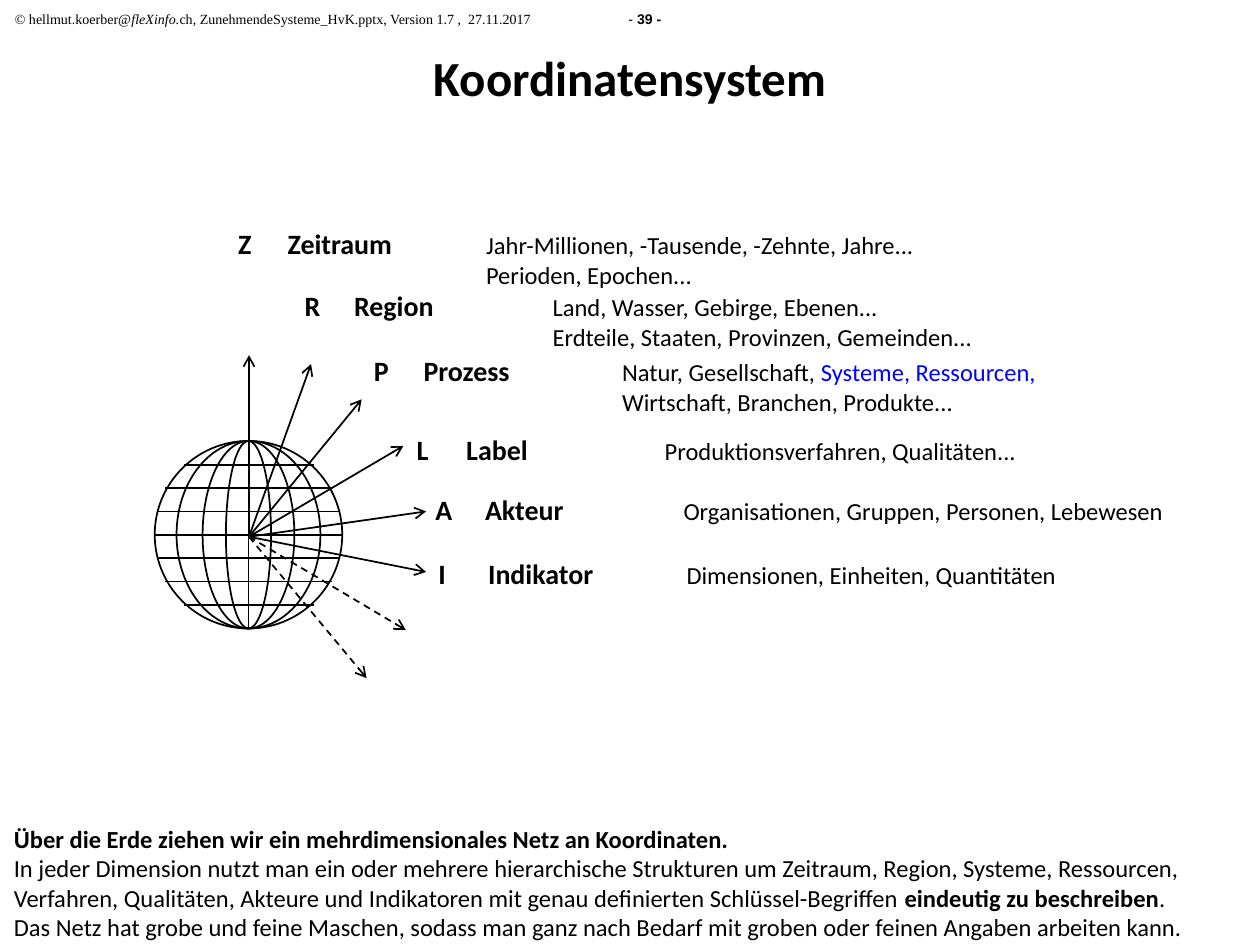
from copy import deepcopy

from lxml import etree
from pptx import Presentation
from pptx.dml.color import RGBColor
from pptx.enum.dml import MSO_LINE
from pptx.enum.shapes import MSO_CONNECTOR, MSO_SHAPE
from pptx.enum.text import MSO_ANCHOR, MSO_AUTO_SIZE, PP_ALIGN
from pptx.oxml.ns import qn
from pptx.util import Cm, Pt

STRAIGHT, OVAL, DASH = MSO_CONNECTOR.STRAIGHT, MSO_SHAPE.OVAL, MSO_LINE.DASH
CENTER, MIDDLE = PP_ALIGN.CENTER, MSO_ANCHOR.MIDDLE
GROW = MSO_AUTO_SIZE.SHAPE_TO_FIT_TEXT

COLORS = {"ink": "000000", "accent": "0000FF"}
TITLE = {"size": Pt(28), "bold": True}
TERM = {"size": Pt(16), "bold": True}
BODY = {"size": Pt(14), "bold": False}
STRONG = {"size": Pt(14), "bold": True}
ACCENT = {**BODY, "color": "accent"}
NOTE = {"size": Pt(8), "name": "Times New Roman"}
NOTE_ITALIC = {**NOTE, "italic": True}
PAGE = {"size": Pt(8), "name": "Arial"}
PAGE_BOLD = {**PAGE, "bold": True}

CX, CY, DIAMETER = 5.01, 10.78, 3.78
MERIDIAN_WIDTHS = [3.78, 2.9, 1.85, 0.91]
PARALLEL_HALVES = [1.9, 1.84, 1.68, 1.31]
PARALLEL_GAP = 0.47
ORIGIN = (5.02, 10.82)
AXES = [(5.02, 7.16), (6.27, 7.34), (7.29, 8.05), (8.13, 8.99), (8.59, 10.31), (8.59, 11.53)]
OPEN_AXES = [(7.39, 13.67), (8.18, 12.7)]
DIMENSIONS = [
    (4.55, 4.45, 17.83, 1.55, "Z\tZeitraum\t",
     [("Jahr-Millionen, -Tausende, -Zehnte, Jahre...\n\t\tPerioden, Epochen...", BODY)]),
    (5.89, 5.69, 17.7, 1.55, "R\tRegion\t",
     [("Land, Wasser, Gebirge, Ebenen...\n\t\tErdteile, Staaten, Provinzen, Gemeinden...", BODY)]),
    (7.29, 7.01, 16.51, 1.55, "P\tProzess\t",
     [("Natur, Gesellschaft, ", BODY), ("Systeme, Ressourcen,\n", ACCENT),
      ("\t\tWirtschaft, Branchen, Produkte...", BODY)]),
    (8.15, 8.59, 14.38, 0.94, "L\tLabel\t", [("Produktionsverfahren, Qualitäten...", BODY)]),
    (8.53, 9.8, 15.6, 0.94, "A\tAkteur\t",
     [("Organisationen, Gruppen, Personen, Lebewesen", BODY)]),
    (8.59, 11.1, 15.19, 0.94, "I\tIndikator\t",
     [("Dimensionen, Einheiten, Quantitäten", BODY)]),
]


class Deck:
    """Hold the style and the current slide, and draw each kind of element."""

    def __init__(self, prs, font="Calibri", weight=1):
        self.font, self.weight = font, Pt(weight)
        self.shapes = prs.slides.add_slide(prs.slide_layouts[6]).shapes

    def run(self, p, text, fmt):
        r = p.add_run()
        r.text = text
        values = {"name": self.font, **fmt}
        r.font.color.rgb = RGBColor.from_string(COLORS[values.pop("color", "ink")])
        for key, value in values.items():
            setattr(r.font, key, value)
        return r

    def text(self, x, y, w, h, runs, tabs=(), align=None, **frame):
        tf = self.shapes.add_textbox(Cm(x), Cm(y), Cm(w), Cm(h)).text_frame
        for key, value in {"word_wrap": True, "auto_size": GROW, **frame}.items():
            setattr(tf, key, value)
        p = tf.paragraphs[0]
        p.alignment = align
        if tabs:
            stops = etree.SubElement(p._p.get_or_add_pPr(), qn("a:tabLst"))
            for pos in tabs:
                etree.SubElement(stops, qn("a:tab"), pos=str(Cm(pos)), algn="l")
        for content, fmt in runs:
            for i, part in enumerate(content.split("\n")):
                if i:
                    p.add_line_break()
                    p._p[-1].append(deepcopy(r._r.rPr))
                if part:
                    r = self.run(p, part, fmt)

    def stroke(self, sp, dash=None):
        sp.line.color.rgb = RGBColor.from_string(COLORS["ink"])
        sp.line.width = self.weight
        if dash:
            sp.line.dash_style = dash

    def ellipse(self, box, cx, cy, w, h):
        sp = box.add_shape(OVAL, Cm(cx - w / 2), Cm(cy - h / 2), Cm(w), Cm(h))
        sp.shadow.inherit = False
        sp.fill.background()
        self.stroke(sp)

    def line(self, box, start, end, dash=None, arrow=False):
        sp = box.add_connector(STRAIGHT, *(Cm(v) for v in (*start, *end)))
        self.stroke(sp, dash)
        if arrow:
            etree.SubElement(sp.line._get_or_add_ln(), qn("a:tailEnd"), type="arrow")
        etree.SubElement(sp._element.spPr, qn("a:effectLst"))

    def globe(self):
        box = self.shapes.add_group_shape().shapes
        for w in MERIDIAN_WIDTHS:
            self.ellipse(box, CX, CY, w, DIAMETER)
        self.line(box, (CX, CY - DIAMETER / 2), (CX, CY + DIAMETER / 2))
        for k in range(-3, 4):
            half, y = PARALLEL_HALVES[abs(k)], CY + k * PARALLEL_GAP
            self.line(box, (CX - half, y), (CX + half, y))


def main():
    prs = Presentation()
    prs.slide_width, prs.slide_height = Cm(25.4), Cm(19.05)
    s = Deck(prs)
    s.text(0.05, 0.08, 25.35, 0.58, [
        ("© hellmut.koerber@", NOTE), ("fleXinfo.", NOTE_ITALIC), ("ch", NOTE),
        (", ", NOTE_ITALIC), ("ZunehmendeSysteme_HvK.pptx, Version 1.7 ,  27.11.2017\t", NOTE),
        ("- ", PAGE), ("39 -", PAGE_BOLD)], tabs=[12.37])
    s.text(1.27, 0.66, 22.86, 1.78, [("Koordinatensystem", TITLE)], align=CENTER,
           vertical_anchor=MIDDLE, auto_size=MSO_AUTO_SIZE.NONE)
    s.globe()
    for ends, dash in ((AXES, None), (OPEN_AXES, DASH)):
        for end in ends:
            s.line(s.shapes, ORIGIN, end, dash, arrow=True)
    for x, y, w, h, term, details in DIMENSIONS:
        s.text(x, y, w, h, [(term, TERM), *details], tabs=[1, 5])
    s.text(0.03, 16.48, 25.4, 2.64, [
        ("Über die Erde ziehen wir ein mehrdimensionales Netz an Koordinaten.\n", STRONG),
        ("In jeder Dimension nutzt man ein oder mehrere hierarchische Strukturen um Zeitraum, "
         "Region, Systeme, Ressourcen, Verfahren, Qualitäten, Akteure und Indikatoren mit genau "
         "definierten Schlüssel-Begriffen ", BODY),
        ("eindeutig zu beschreiben", STRONG),
        (".\nDas Netz hat grobe und feine Maschen, sodass man ganz nach Bedarf mit groben oder "
         "feinen Angaben arbeiten kann.", BODY)])
    prs.save("out.pptx")


if __name__ == "__main__":
    main()
